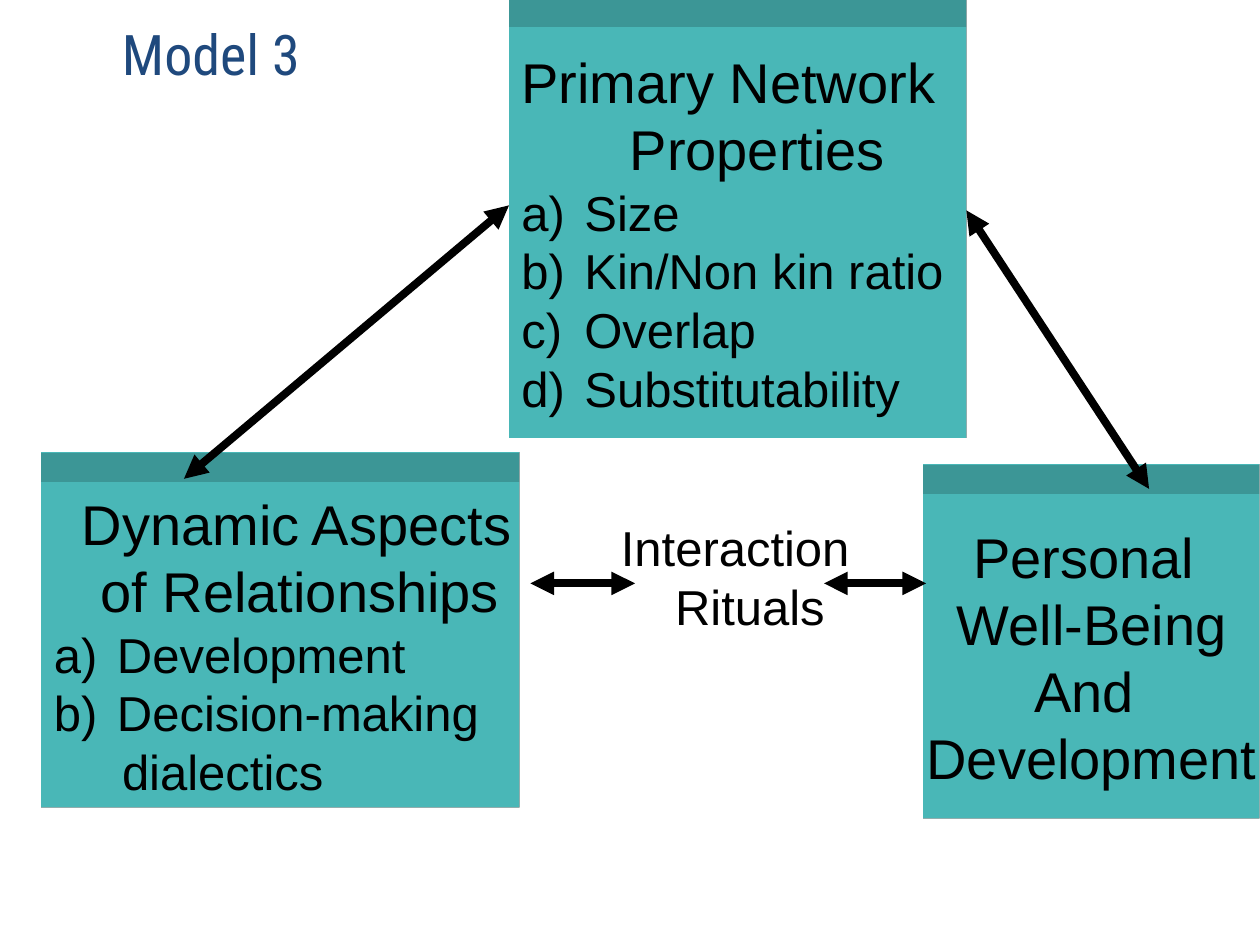
import pptx
import pptx.dml.color
import pptx.enum.shapes
import pptx.enum.text
import pptx.oxml
import pptx.oxml.ns
import pptx.util
from pptx.util import Inches

COLORS = {"title": "1F497D", "text": "000000", "block": "66FFFF", "arrow": "000000"}
HEADING, ITEM = 32, 28
ANCHOR = pptx.enum.text.MSO_ANCHOR
ALIGN = pptx.enum.text.PP_ALIGN


def rgb(name):
    return pptx.dml.color.RGBColor.from_string(COLORS[name])


def xml(markup):
    namespace = pptx.oxml.ns.nsdecls("a")
    return pptx.oxml.parse_xml(markup.replace(">", f" {namespace}>", 1))


def write_lines(frame, lines, align=ALIGN.LEFT, font="Arial", color="text"):
    """Each line is (text, size, left indent in inches, or "a)" for a lettered item)."""
    frame.text = "\n".join(line[0] for line in lines)
    for paragraph, (_, size, indent) in zip(frame.paragraphs, lines):
        paragraph.alignment = align
        properties = paragraph._p.get_or_add_pPr()
        if indent == "a)":
            properties.set("marL", str(Inches(0.5)))
            properties.set("indent", str(-Inches(0.5)))
            properties.append(xml('<a:buFont typeface="Arial"></a:buFont>'))
            properties.append(xml('<a:buAutoNum type="alphaLcParenR"></a:buAutoNum>'))
        else:
            properties.set("marL", str(Inches(indent)))
            properties.set("indent", "0")
        for run in paragraph.runs:
            run.font.size = pptx.util.Pt(size)
            run.font.name = font
            run.font.color.rgb = rgb(color)


def add_label(slide, box, lines, anchor, **style):
    label = slide.shapes.add_textbox(*map(Inches, box))
    label.text_frame.word_wrap = True
    label.text_frame.vertical_anchor = anchor
    write_lines(label.text_frame, lines, **style)


def add_block(slide, box, lines, align=ALIGN.LEFT):
    block = slide.shapes.add_shape(
        pptx.enum.shapes.MSO_SHAPE.RECTANGLE, *map(Inches, box))
    block.shadow.inherit = False
    block.fill.solid()
    block.fill.fore_color.rgb = rgb("block")
    block.line.fill.background()
    # Extrude the block upwards
    block._element.spPr.append(xml(
        '<a:scene3d><a:camera prst="legacyObliqueTop"/>'
        '<a:lightRig rig="legacyFlat3" dir="b"/></a:scene3d>'))
    block._element.spPr.append(xml(
        '<a:sp3d extrusionH="430200" prstMaterial="legacyMatte">'
        '<a:bevelT w="13500" h="13500" prst="angle"/>'
        '<a:bevelB w="13500" h="13500" prst="angle"/>'
        f'<a:extrusionClr><a:srgbClr val="{COLORS["block"]}"/></a:extrusionClr></a:sp3d>'))
    block.text_frame.word_wrap = False
    block.text_frame.vertical_anchor = ANCHOR.MIDDLE
    write_lines(block.text_frame, lines, align)


def add_double_arrow(slide, ends):
    arrow = slide.shapes.add_connector(
        pptx.enum.shapes.MSO_CONNECTOR.STRAIGHT, *map(Inches, ends))
    arrow.line.color.rgb = rgb("arrow")
    arrow.line.width = pptx.util.Pt(4.5)
    for end in ("headEnd", "tailEnd"):
        arrow.line._get_or_add_ln().append(xml(f'<a:{end} type="triangle"></a:{end}>'))
    arrow._element.spPr.append(xml("<a:effectLst></a:effectLst>"))


def main():
    deck = pptx.Presentation()
    deck.slide_width, deck.slide_height = Inches(10), Inches(7.5)
    slide = deck.slides.add_slide(deck.slide_layouts[6])

    # Title and centre label
    add_label(slide, (0.87, 0.13, 2, 0.58), [("Model 3", HEADING, 0)],
              ANCHOR.MIDDLE, font="Roboto Condensed", color="title")
    add_label(slide, (4.83, 3.58, 2.17, 1.51),
              [("Interaction", ITEM, 0), ("Rituals", ITEM, 0.43)], ANCHOR.BOTTOM)

    # Blocks of the model
    add_block(slide, (7.33, 3.92, 2.67, 2.58),
              [(text, HEADING, 0)
               for text in ("Personal ", "Well-Being", "And ", "Development")],
              ALIGN.CENTER)
    add_block(slide, (0.33, 3.83, 3.79, 2.58), [
        ("Dynamic Aspects", HEADING, 0.22),
        ("of Relationships", HEADING, 0.37),
        ("Development", ITEM, "a)"),
        ("Decision-making", ITEM, "a)"),
        ("dialectics", ITEM, 0.54)])
    add_block(slide, (4.04, 0.22, 3.63, 3.25), [
        ("Primary Network", HEADING, 0),
        ("Properties", HEADING, 0.86),
        *((text, ITEM, "a)") for text in
          ("Size", "Kin/Non kin ratio", "Overlap", "Substitutability"))])

    # Arrows between the blocks
    for ends in ((6.54, 4.63, 7.35, 4.63), (4.21, 4.63, 5.04, 4.63),
                 (7.67, 1.67, 9.12, 3.88), (1.46, 3.8, 4.04, 1.63)):
        add_double_arrow(slide, ends)

    deck.save("out.pptx")


if __name__ == "__main__":
    main()
